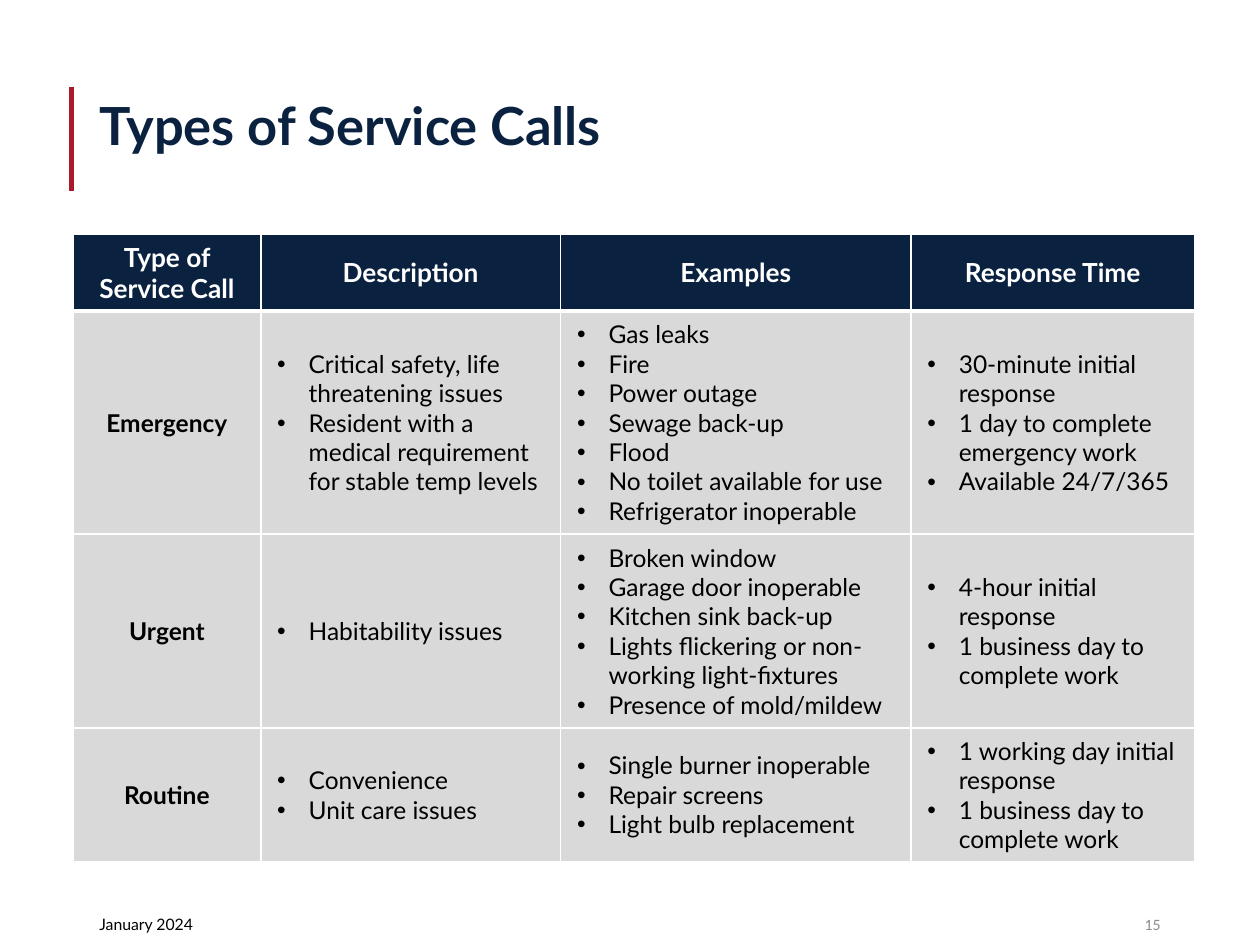
from lxml import etree
from pptx import Presentation
from pptx.dml.color import RGBColor
from pptx.enum.shapes import MSO_CONNECTOR
from pptx.enum.text import MSO_ANCHOR, PP_ALIGN
from pptx.oxml.ns import qn
from pptx.util import Inches, Pt

LINE = MSO_CONNECTOR.STRAIGHT
MIDDLE = MSO_ANCHOR.MIDDLE
LEFT, CENTER, RIGHT = PP_ALIGN.LEFT, PP_ALIGN.CENTER, PP_ALIGN.RIGHT

COLORS = {"navy": "0A2240", "red": "AA182C", "gray": "D9D9D9",
          "white": "FFFFFF", "black": "000000", "dim": "8C8C8C"}

STYLES = {
    "title": {"name": "Lato", "size": Pt(30), "bold": True, "color": "navy"},
    "date": {"name": "Lato", "size": Pt(9), "color": "black"},
    "page": {"name": "Calibri", "size": Pt(9), "color": "dim"},
    "head": {"name": "Lato", "size": Pt(15), "bold": True, "color": "white"},
    "type": {"name": "Lato", "size": Pt(14), "bold": True, "color": "black"},
    "item": {"name": "Lato", "size": Pt(14), "bold": False, "color": "black"},
}

LABELS = [
    ("Types of Service Calls", "title", (0.69, 0.75, 8.62, 0.64), LEFT, 0.9),
    ("January 2024", "date", (0.69, 7.21, 2.25, 0.21), LEFT, 1.0),
    ("15", "page", (7.06, 7.21, 2.25, 0.4), RIGHT, 1.0),
]

HEADS = ["Type of Service Call", "Description", "Examples", "Response Time"]
CALLS = [
    ("Emergency",
     ["Critical safety, life threatening issues",
      "Resident with a medical requirement for stable temp levels"],
     ["Gas leaks", "Fire", "Power outage", "Sewage back-up", "Flood",
      "No toilet available for use", "Refrigerator inoperable"],
     ["30-minute initial response", "1 day to complete emergency work",
      "Available 24/7/365"]),
    ("Urgent",
     ["Habitability issues"],
     ["Broken window", "Garage door inoperable", "Kitchen sink back-up",
      "Lights flickering or non-working light-fixtures",
      "Presence of mold/mildew"],
     ["4-hour initial response", "1 business day to complete work"]),
    ("Routine",
     ["Convenience", "Unit care issues"],
     ["Single burner inoperable", "Repair screens",
      "Light bulb replacement"],
     ["1 working day initial response", "1 business day to complete work"]),
]
WIDTHS = [1.49, 2.38, 2.78, 2.25]
HEIGHTS = [0.61, 1.77, 1.54, 1.06]


def rgb(name):
    return RGBColor.from_string(COLORS[name])


def write(para, text, style):
    run = para.add_run()
    run.text = text
    for key, value in STYLES[style].items():
        if key == "color":
            run.font.color.rgb = rgb(value)
        else:
            setattr(run.font, key, value)


def bullet(para):
    props = para._p.get_or_add_pPr()
    props.set("marL", str(Inches(0.28)))
    props.set("indent", str(Inches(-0.25)))
    font = etree.SubElement(props, qn("a:buFont"))
    font.set("typeface", "Arial")
    etree.SubElement(props, qn("a:buChar")).set("char", "•")


def border(cell, sides):
    props = cell._tc.get_or_add_tcPr()
    for side, width in sides.items():
        edge = etree.SubElement(props, qn("a:ln" + side))
        edge.set("w", str(Pt(width)))
        fill = etree.SubElement(edge, qn("a:solidFill"))
        color = etree.SubElement(fill, qn("a:srgbClr"))
        color.set("val", COLORS["white"])


def fill_cell(cell, content, style, row):
    listed = isinstance(content, list)
    border(cell, {"L": 1, "R": 1, "T": 3 if row == 1 else 1,
                  "B": 3 if row == 0 else 1})
    cell.fill.solid()
    cell.fill.fore_color.rgb = rgb("gray" if row else "navy")
    cell.vertical_anchor = MIDDLE
    frame = cell.text_frame
    for i, text in enumerate(content if listed else [content]):
        para = frame.add_paragraph() if i else frame.paragraphs[0]
        if listed:
            bullet(para)
        else:
            para.alignment = CENTER
        write(para, text, style)


def add_calls(slide):
    rows = [HEADS] + CALLS
    size = (0.58, 1.86, sum(WIDTHS), sum(HEIGHTS))
    table = slide.shapes.add_table(len(rows), len(HEADS),
                                   *map(Inches, size)).table
    for col, width in zip(table.columns, WIDTHS):
        col.width = Inches(width)
    for r, (row, height) in enumerate(zip(rows, HEIGHTS)):
        table.rows[r].height = Inches(height)
        for c, content in enumerate(row):
            style = "head" if r == 0 else "item" if c else "type"
            fill_cell(table.cell(r, c), content, style, r)


def add_label(slide, text, style, box, align, space):
    frame = slide.shapes.add_textbox(*map(Inches, box)).text_frame
    frame.word_wrap = True
    para = frame.paragraphs[0]
    para.alignment = align
    para.line_spacing = space
    write(para, text, style)


def add_bar(slide):
    ends = map(Inches, (0.57, 0.69, 0.57, 1.52))
    bar = slide.shapes.add_connector(LINE, *ends)
    bar.line.color.rgb = rgb("red")
    bar.line.width = Pt(3)
    etree.SubElement(bar._element.spPr, qn("a:effectLst"))


def main():
    deck = Presentation()
    deck.slide_width, deck.slide_height = Inches(10), Inches(7.5)
    slide = deck.slides.add_slide(deck.slide_layouts[6])
    add_bar(slide)
    for label in LABELS:
        add_label(slide, *label)
    add_calls(slide)
    deck.save("out.pptx")


if __name__ == "__main__":
    main()
